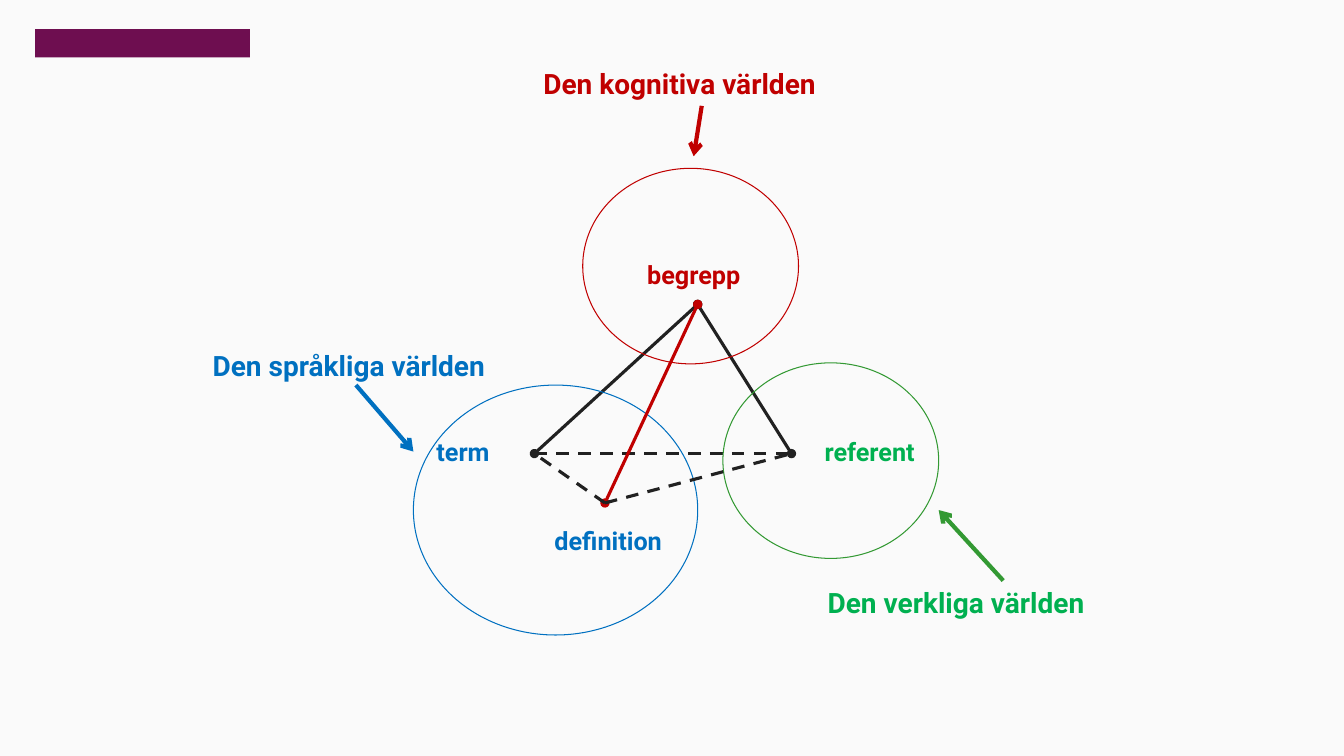
from lxml import etree
from pptx import Presentation
from pptx.dml.color import RGBColor
from pptx.enum.dml import MSO_LINE
from pptx.enum.shapes import MSO_CONNECTOR, MSO_SHAPE
from pptx.oxml.ns import qn
from pptx.util import Inches, Pt

COLUMNS, ROWS = 133.3, 75
CELL = Inches(0.1)
FONT = "Roboto"
BACKGROUND, BRAND, INK = "FAFAFA", "6E0E50", "212121"
RED, BLUE, GREEN, LEAF = "C00000", "0070C0", "00B050", "339933"

BRAND_BAR = (3.5, 2.9, 21.3, 2.8)

CONCEPT, TERM, DEFINITION, REFERENT = (69.2, 30.2), (53, 45), (60, 49.9), (78.5, 45)

# start, end, colour, dashed
BASE_EDGE = [(TERM, REFERENT, INK, True)]
SIDE_EDGES = [
    (CONCEPT, TERM, INK, False),
    (CONCEPT, REFERENT, INK, False),
]
DEFINITION_EDGES = [
    (CONCEPT, DEFINITION, RED, False),
    (DEFINITION, REFERENT, INK, True),
    (DEFINITION, TERM, INK, True),
]

# centre, size, colour
WORLDS = [
    ((68.5, 26.4), (21.4, 19.4), RED),
    ((55.1, 50.6), (28.2, 24.8), BLUE),
    ((82.4, 45.7), (21.4, 19.4), LEAF),
]

# text, left, top, width, colour
NODE_LABELS = [
    ("begrepp", 63.2, 25.2, 12.5, RED),
    ("term", 42.3, 42.8, 8.1, BLUE),
    ("referent", 80.8, 42.8, 12.3, GREEN),
    ("definition", 54, 51.6, 14.2, BLUE),
]
WORLD_LABELS = [
    ("Den kognitiva världen", 52.9, 6.1, 33.5, RED),
    ("Den språkliga världen", 20.1, 34.1, 33.5, BLUE),
    ("Den verkliga världen", 81.1, 57.6, 33.5, GREEN),
]

POINTERS = [
    ((69.6, 10.5), (68.8, 15.5), RED),
    ((35.3, 38.2), (41, 44.8), BLUE),
    ((99.5, 57.6), (93.1, 50.6), LEAF),
]


def color(value):
    return RGBColor.from_string(value)


def cells(*counts):
    return [round(count * CELL) for count in counts]


def add_line(slide, start, end, line_color, weight, dashed=False, head=None, tail=None):
    connector = slide.shapes.add_connector(MSO_CONNECTOR.STRAIGHT, *cells(*start, *end))
    connector.line.color.rgb = color(line_color)
    connector.line.width = Pt(weight)
    if dashed:
        connector.line.dash_style = MSO_LINE.DASH
    outline = connector.line._get_or_add_ln()
    for tag, kind in (("a:headEnd", head), ("a:tailEnd", tail)):
        if kind:
            etree.SubElement(outline, qn(tag), type=kind)
    etree.SubElement(connector._element.spPr, qn("a:effectLst"))


def add_edges(slide, edges):
    for start, end, line_color, dashed in edges:
        ends = None if dashed else "oval"
        add_line(slide, start, end, line_color, 2.25, dashed, ends, ends)


def add_label(slide, text, left, top, width, font_color, size, height, wrap):
    box = slide.shapes.add_textbox(*cells(left, top, width, height))
    frame = box.text_frame
    frame.word_wrap = wrap
    frame.text = text
    font = frame.paragraphs[0].runs[0].font
    font.name, font.size, font.bold = FONT, Pt(size), True
    font.color.rgb = color(font_color)


def add_world(slide, centre, size, line_color):
    corner = [middle - extent / 2 for middle, extent in zip(centre, size)]
    shape = slide.shapes.add_shape(MSO_SHAPE.OVAL, *cells(*corner, *size))
    shape.shadow.inherit = False
    shape.fill.background()
    shape.line.color.rgb = color(line_color)
    shape.line.width = Pt(0.75)


def add_brand_bar(slide):
    shape = slide.shapes.add_shape(MSO_SHAPE.RECTANGLE, *cells(*BRAND_BAR))
    shape.shadow.inherit = False
    shape.fill.solid()
    shape.fill.fore_color.rgb = color(BRAND)
    shape.line.fill.background()


def main():
    presentation = Presentation()
    presentation.slide_width, presentation.slide_height = cells(COLUMNS, ROWS)
    slide = presentation.slides.add_slide(presentation.slide_layouts[6])
    slide.background.fill.solid()
    slide.background.fill.fore_color.rgb = color(BACKGROUND)

    add_brand_bar(slide)
    add_edges(slide, BASE_EDGE + SIDE_EDGES)
    for label in NODE_LABELS:
        add_label(slide, *label, size=18, height=4, wrap=False)
    for world in WORLDS:
        add_world(slide, *world)
    add_edges(slide, DEFINITION_EDGES)
    for label in WORLD_LABELS:
        add_label(slide, *label, size=20, height=4.4, wrap=True)
    for start, end, line_color in POINTERS:
        add_line(slide, start, end, line_color, 3, tail="arrow")

    presentation.save("out.pptx")


if __name__ == "__main__":
    main()
